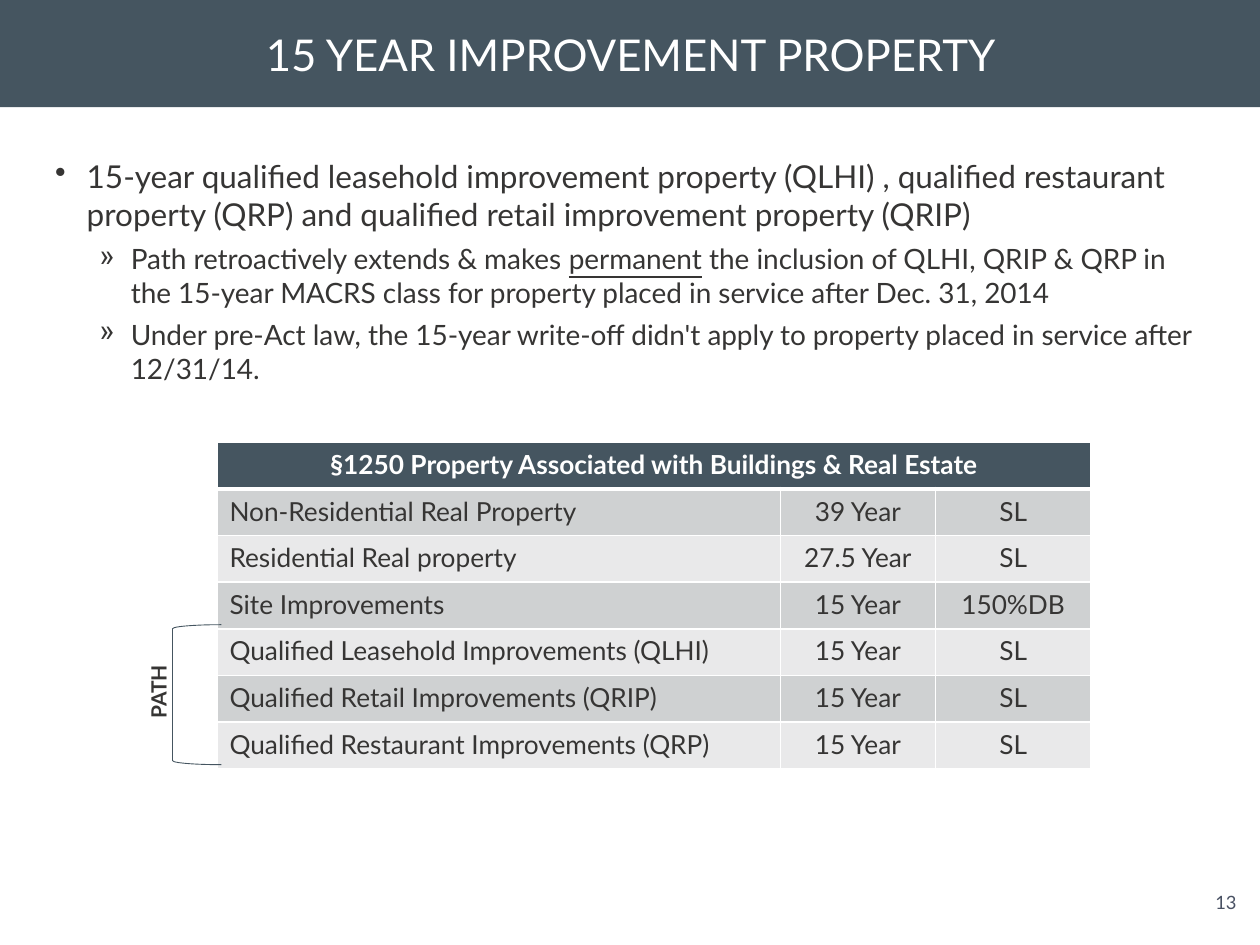
from dataclasses import dataclass
from typing import NamedTuple

from lxml.etree import SubElement
from pptx import Presentation
from pptx.dml.color import RGBColor
from pptx.enum.shapes import MSO_SHAPE as Preset
from pptx.enum.text import MSO_ANCHOR as Anchor, PP_ALIGN as Align
from pptx.oxml.ns import qn
from pptx.util import Pt


@dataclass(frozen=True)
class Theme:
    font: str = "Lato"
    slate: str = "455560"
    ink: str = "363534"
    white: str = "FFFFFF"
    number: str = "495163"
    bands: tuple = ("CFD1D2", "E9E9EA")
    title_size: float = 25
    body_size: float = 18
    detail_size: float = 16
    table_size: float = 15
    label_size: float = 12
    number_size: float = 10.5


class Bullet(NamedTuple):
    runs: tuple  # every second run is underlined
    mark: str
    level: int
    indent: float
    size: float
    before: float


class Property(NamedTuple):
    name: str
    life: str
    method: str


THEME = Theme()
BULLETS = (
    Bullet(("15-year qualified leasehold improvement property (QLHI) , qualified restaurant "
            "property (QRP) and qualified retail improvement property (QRIP)",),
           "•", 0, 18, THEME.body_size, 0),
    Bullet(("Path retroactively extends & makes ", "permanent",
            " the inclusion of QLHI, QRIP & QRP in the 15-year MACRS class "
            "for property placed in service after Dec. 31, 2014"),
           "»", 1, 43.2, THEME.detail_size, 5),
    Bullet(("Under pre-Act law, the 15-year write-off didn't apply to property "
            "placed in service after 12/31/14.",),
           "»", 1, 43.2, THEME.detail_size, 5),
)
PROPERTIES = (
    Property("Non-Residential Real Property", "39 Year", "SL"),
    Property("Residential Real property", "27.5 Year", "SL"),
    Property("Site Improvements", "15 Year", "150%DB"),
    Property("Qualified Leasehold Improvements (QLHI)", "15 Year", "SL"),
    Property("Qualified Retail Improvements (QRIP)", "15 Year", "SL"),
    Property("Qualified Restaurant Improvements (QRP)", "15 Year", "SL"),
)
COLUMN_WIDTHS = (322, 88.5, 89)
ROW_HEIGHT = 26.65


def color(value: str) -> RGBColor:
    return RGBColor.from_string(value)


def write(paragraph, text: str, *, size: float, ink: str = THEME.ink, bold: bool = False,
          underline: bool = False, align=None) -> None:
    """Add one formatted run to a paragraph."""
    run = paragraph.add_run()
    run.text = text
    font = run.font
    font.name, font.size, font.bold = THEME.font, Pt(size), bold
    font.underline = underline
    font.color.rgb = color(ink)
    if align is not None:
        paragraph.alignment = align


def add_box(slide, left: float, top: float, width: float, height: float,
            wrap: bool = True, margin: float | None = None):
    box = slide.shapes.add_textbox(Pt(left), Pt(top), Pt(width), Pt(height))
    frame = box.text_frame
    frame.word_wrap = wrap
    if margin is not None:
        frame.margin_left = frame.margin_right = Pt(margin)
        frame.margin_top = frame.margin_bottom = Pt(margin)
    return box


def add_bullet(paragraph, bullet: Bullet) -> None:
    paragraph.level = bullet.level
    if bullet.before:
        paragraph.space_before = Pt(bullet.before)
    properties = paragraph._p.get_or_add_pPr()
    properties.set("marL", str(Pt(bullet.indent)))
    properties.set("indent", str(Pt(-18)))
    SubElement(properties, qn("a:buChar"), char=bullet.mark)
    for position, text in enumerate(bullet.runs):
        write(paragraph, text, size=bullet.size, underline=position % 2 == 1)


def set_borders(cell, **widths: float) -> None:
    """Draw white borders; keywords L, R, T and B override the 1 pt width."""
    properties = cell._tc.get_or_add_tcPr()
    for side in "LRTB":
        line = SubElement(properties, qn(f"a:ln{side}"), w=str(Pt(widths.get(side, 1))))
        fill = SubElement(line, qn("a:solidFill"))
        SubElement(fill, qn("a:srgbClr"), val=THEME.white)


def fill_cell(cell, fill: str) -> None:
    cell.fill.solid()
    cell.fill.fore_color.rgb = color(fill)


def add_property_table(slide, left: float, top: float) -> None:
    rows = len(PROPERTIES) + 1
    table = slide.shapes.add_table(rows, len(COLUMN_WIDTHS), Pt(left), Pt(top),
                                   Pt(sum(COLUMN_WIDTHS)), Pt(ROW_HEIGHT * rows)).table
    for column, width in zip(table.columns, COLUMN_WIDTHS):
        column.width = Pt(width)
    for row in table.rows:
        row.height = Pt(ROW_HEIGHT)

    # Heading across all columns
    heading = table.cell(0, 0)
    for cell in table.rows[0].cells:
        set_borders(cell, B=3)
        fill_cell(cell, THEME.slate)
    heading.merge(table.cell(0, len(COLUMN_WIDTHS) - 1))
    write(heading.text_frame.paragraphs[0],
          "§1250 Property Associated with Buildings & Real Estate",
          size=THEME.table_size, ink=THEME.white, bold=True, align=Align.CENTER)

    # Banded rows
    for row, record in enumerate(PROPERTIES, start=1):
        for column, text in enumerate(record):
            cell = table.cell(row, column)
            set_borders(cell, T=3 if row == 1 else 1)
            fill_cell(cell, THEME.bands[(row - 1) % 2])
            write(cell.text_frame.paragraphs[0], text, size=THEME.table_size,
                  align=Align.CENTER if column else Align.LEFT)


def main() -> None:
    presentation = Presentation()
    presentation.slide_width, presentation.slide_height = Pt(720), Pt(540)
    slide = presentation.slides.add_slide(presentation.slide_layouts[5])

    # Title on its bar
    title = slide.shapes.title
    title.left, title.top, title.width, title.height = Pt(36.7), Pt(0), Pt(647.3), Pt(61.2)
    title.text_frame.vertical_anchor = Anchor.MIDDLE
    write(title.text_frame.paragraphs[0], "15 YEAR IMPROVEMENT PROPERTY",
          size=THEME.title_size, ink=THEME.white, align=Align.CENTER)
    bar = slide.shapes.add_shape(Preset.RECTANGLE, Pt(0), Pt(0), Pt(720), Pt(61.2))
    bar.shadow.inherit = False
    bar.fill.solid()
    bar.fill.fore_color.rgb = color(THEME.slate)
    bar.line.fill.background()
    title.element.addprevious(bar.element)

    # Slide number
    number = add_box(slide, 694, 509, 13, 13, wrap=False, margin=0)
    write(number.text_frame.paragraphs[0], "13", size=THEME.number_size,
          ink=THEME.number, align=Align.CENTER)

    # Bullets
    body = add_box(slide, 24.5, 86.4, 674.6, 440.6).text_frame
    for position, bullet in enumerate(BULLETS):
        add_bullet(body.add_paragraph() if position else body.paragraphs[0], bullet)

    add_property_table(slide, 124, 252.7)

    # Bracket and label for the last three rows
    bracket = slide.shapes.add_shape(Preset.LEFT_BRACKET, Pt(98.6), Pt(357), Pt(28), Pt(80))
    bracket.shadow.inherit = False
    bracket.fill.background()
    bracket.line.color.rgb = color(THEME.slate)
    bracket.line.width = Pt(0.5)
    label = add_box(slide, 65, 384.5, 51, 21.6)
    label.rotation = 270
    write(label.text_frame.paragraphs[0], "PATH", size=THEME.label_size,
          bold=True, align=Align.CENTER)

    presentation.save("out.pptx")


if __name__ == "__main__":
    main()
